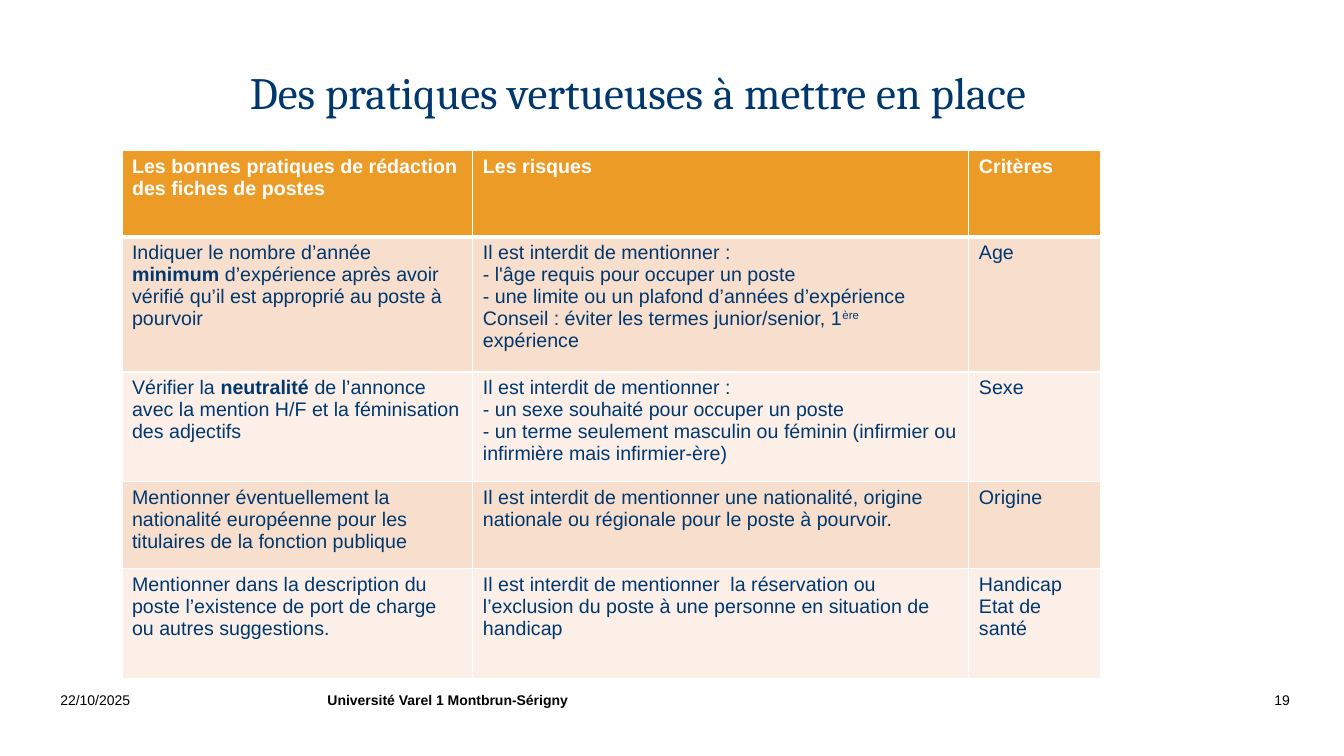
from dataclasses import dataclass

from lxml import etree
from pptx import Presentation
from pptx.dml.color import RGBColor
from pptx.enum.text import MSO_ANCHOR, PP_ALIGN
from pptx.oxml.ns import qn
from pptx.util import Inches, Pt

LEFT, CENTER, RIGHT = PP_ALIGN.LEFT, PP_ALIGN.CENTER, PP_ALIGN.RIGHT
TOP, MIDDLE = MSO_ANCHOR.TOP, MSO_ANCHOR.MIDDLE


@dataclass(frozen=True)
class Theme:
    head: str = "Cambria"
    body: str = "Arial"
    navy: str = "00386E"
    black: str = "000000"
    white: str = "FFFFFF"
    orange: str = "ED9B27"
    bands: tuple = ("F8DECD", "FCEFE8")
    title: int = 32
    cell: int = 14
    foot: int = 10


theme = Theme()


def add_run(para, text, font, size, color, bold=False, raised=False):
    run = para.add_run()
    run.text = text
    run.font.name = font
    run.font.size = Pt(size)
    run.font.bold = bold
    run.font.color.rgb = RGBColor.from_string(color)
    if raised:
        run.font._element.set("baseline", "30000")


def add_box(place, text, font, size, color, bold=False, align=LEFT, anchor=TOP):
    box = slide.shapes.add_textbox(*[Inches(n) for n in place])
    frame = box.text_frame
    frame.word_wrap = True
    frame.vertical_anchor = anchor
    para = frame.paragraphs[0]
    para.alignment = align
    add_run(para, text, font, size, color, bold)
    return para


deck = Presentation()
deck.slide_width, deck.slide_height = Inches(13.33), Inches(7.5)
slide = deck.slides.add_slide(deck.slide_layouts[6])

# Footer: date, page number, school
for left, width, text, bold, align in [
    (0.5, 2.06, "22/10/2025", False, LEFT),
    (11.8, 1.09, "19", False, RIGHT),
    (3.15, 3, "Université Varel 1 Montbrun-Sérigny", True, LEFT),
]:
    add_box((left, 6.81, width, 0.27), text, theme.body, theme.foot,
            theme.black, bold, align)

# Title
title = add_box((0.63, 0.4, 11.5, 1.09), "Des pratiques vertueuses à mettre en place ",
                theme.head, theme.title, theme.navy, align=CENTER, anchor=MIDDLE)
title.line_spacing = 0.9

# Table content: a cell is a list of paragraphs, a paragraph a list of (text, style)
PLAIN, BOLD, RAISED = "plain", "bold", "raised"
banned = [("Il est interdit de mentionner :", PLAIN)]
rows = [
    [
        [[("Les bonnes pratiques de rédaction des fiches de postes", BOLD)]],
        [[("Les risques", BOLD)]],
        [[("Critères", BOLD)]],
    ],
    [
        [[("Indiquer le nombre d’année ", PLAIN), ("minimum", BOLD),
          (" d’expérience après avoir vérifié qu’il est approprié au poste à pourvoir",
           PLAIN)]],
        [banned,
         [("- l'âge requis pour occuper un poste", PLAIN)],
         [("- une limite ou un plafond d’années d’expérience", PLAIN)],
         [("Conseil : éviter les termes junior/senior, 1", PLAIN), ("ère", RAISED),
          (" expérience", PLAIN)]],
        [[("Age", PLAIN)]],
    ],
    [
        [[("Vérifier la ", PLAIN), ("neutralité ", BOLD),
          ("de l’annonce avec la mention H/F et la féminisation des adjectifs", PLAIN)]],
        [banned,
         [("- un sexe souhaité pour occuper un poste", PLAIN)],
         [("- un terme seulement masculin ou féminin (infirmier ou infirmière "
           "mais infirmier-ère)", PLAIN)]],
        [[("Sexe", PLAIN)]],
    ],
    [
        [[("Mentionner éventuellement la nationalité européenne pour les titulaires "
           "de la fonction publique", PLAIN)]],
        [[("Il est interdit de mentionner une nationalité, origine nationale ou "
           "régionale pour le poste à pourvoir.", PLAIN)]],
        [[("Origine", PLAIN)]],
    ],
    [
        [[("Mentionner dans la description du poste l’existence de port de charge "
           "ou autres suggestions.", PLAIN)]],
        [[("Il est interdit de mentionner  la réservation ou l’exclusion du poste "
           "à une personne en situation de handicap", PLAIN)]],
        [[("Handicap", PLAIN)], [("Etat de santé", PLAIN)]],
    ],
]

# Table grid
widths = [3.48, 4.92, 1.31]
heights = [0.86, 1.34, 1.09, 0.86, 1.09]
table = slide.shapes.add_table(
    len(heights), len(widths), Inches(1.21), Inches(1.49),
    Inches(sum(widths)), Inches(sum(heights))).table
for col, width in zip(table.columns, widths):
    col.width = Inches(width)
for row, height in zip(table.rows, heights):
    row.height = Inches(height)

# Table cells: fill, text, white borders
for r, row in enumerate(rows):
    fill = theme.bands[(r - 1) % 2] if r else theme.orange
    color = theme.navy if r else theme.white
    for c, paras in enumerate(row):
        cell = table.cell(r, c)
        cell.fill.solid()
        cell.fill.fore_color.rgb = RGBColor.from_string(fill)
        frame = cell.text_frame
        for i, runs in enumerate(paras):
            para = frame.add_paragraph() if i else frame.paragraphs[0]
            for text, style in runs:
                add_run(para, text, theme.body, theme.cell, color,
                        style == BOLD, style == RAISED)
        props = cell._tc.get_or_add_tcPr()
        sides = [("a:lnL", 1), ("a:lnR", 1), ("a:lnT", 3 if r == 1 else 1),
                 ("a:lnB", 1 if r else 3)]
        for i, (side, weight) in enumerate(sides):
            line = etree.Element(qn(side), w=str(Pt(weight)))
            paint = etree.SubElement(line, qn("a:solidFill"))
            etree.SubElement(paint, qn("a:srgbClr"), val=theme.white)
            props.insert(i, line)

deck.save("out.pptx")
